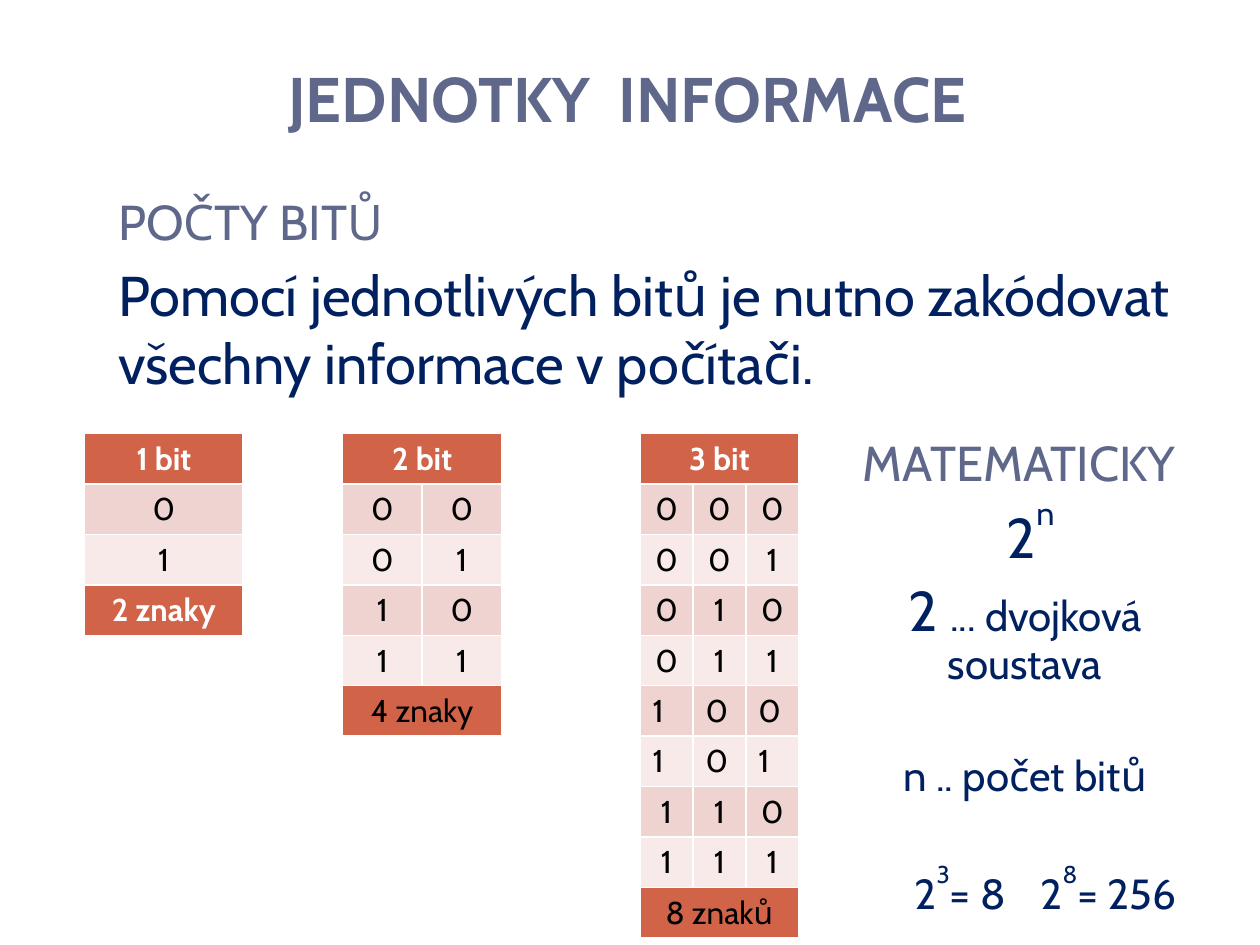
from dataclasses import dataclass
from itertools import product

from lxml import etree
from pptx import Presentation
from pptx.dml.color import RGBColor
from pptx.enum import text
from pptx.oxml.ns import qn
from pptx.util import Inches, Pt

COLORS = {
    "heading": "5F688B",
    "body": "002060",
    "accent": "D16349",
    "band_dark": "EED3D0",
    "band_light": "F7EAE9",
    "white": "FFFFFF",
    "black": "000000",
}
FONT = "Cabin"
CENTER, LEFT = text.PP_ALIGN.CENTER, text.PP_ALIGN.LEFT
TABLE_TOP, TABLE_WIDTH, ROW_HEIGHT = 3.44, 1.26, 0.4
LEFT_ALIGNED_CODES = ("100", "101")


@dataclass
class Piece:
    text: str
    size: float = 24
    color: str = "body"
    bold: bool = False
    raised: bool = False


@dataclass
class Line:
    pieces: list[Piece]
    align: text.PP_ALIGN = CENTER
    before: float = 6
    indent: float = 0
    tabs: tuple[float, ...] = ()


@dataclass
class BitTable:
    bits: int
    left: float
    total: str
    total_color: str = "black"
    total_bold: bool = False


def add_piece(paragraph, piece: Piece) -> None:
    run = paragraph.add_run()
    run.text = piece.text
    run.font.name = FONT
    run.font.size = Pt(piece.size)
    run.font.bold = piece.bold
    run.font.color.rgb = RGBColor.from_string(COLORS[piece.color])
    if piece.raised:
        run.font._element.set("baseline", "60000")


def set_indent_and_tabs(paragraph, line: Line) -> None:
    properties = paragraph._p.get_or_add_pPr()
    properties.set("marL", str(Inches(line.indent)))
    properties.set("indent", "0")
    if line.tabs:
        stops = etree.SubElement(properties, qn("a:tabLst"))
        for position in line.tabs:
            etree.SubElement(stops, qn("a:tab"), pos=str(Inches(position)), algn="l")


def add_text(slide, box: tuple[float, ...], lines: list[Line], spacing: float) -> None:
    frame = slide.shapes.add_textbox(*map(Inches, box)).text_frame
    frame.word_wrap = True
    for index, line in enumerate(lines):
        paragraph = frame.add_paragraph() if index else frame.paragraphs[0]
        paragraph.alignment = line.align
        paragraph.line_spacing = spacing
        paragraph.space_before = Pt(line.before)
        set_indent_and_tabs(paragraph, line)
        for piece in line.pieces:
            add_piece(paragraph, piece)


def fill_cell(cell, piece: Piece, fill: str, align: text.PP_ALIGN = CENTER) -> None:
    cell.fill.solid()
    cell.fill.fore_color.rgb = RGBColor.from_string(COLORS[fill])
    paragraph = cell.text_frame.paragraphs[0]
    paragraph.alignment = align
    add_piece(paragraph, piece)


def add_bit_table(slide, spec: BitTable) -> None:
    """List every code of the given number of bits between a header and a total."""
    codes = ["".join(digits) for digits in product("01", repeat=spec.bits)]
    rows = len(codes) + 2
    table = slide.shapes.add_table(
        rows, spec.bits, Inches(spec.left), Inches(TABLE_TOP),
        Inches(TABLE_WIDTH), Inches(ROW_HEIGHT * rows),
    ).table
    header = Piece(f"{spec.bits} bit", 18, "white", True)
    total = Piece(spec.total, 18, spec.total_color, spec.total_bold)
    for row, piece in ((0, header), (rows - 1, total)):
        if spec.bits > 1:
            table.cell(row, 0).merge(table.cell(row, spec.bits - 1))
        fill_cell(table.cell(row, 0), piece, "accent")
    for row, code in enumerate(codes, start=1):
        fill = "band_dark" if row % 2 else "band_light"
        align = LEFT if code in LEFT_ALIGNED_CODES else CENTER
        for column, digit in enumerate(code):
            fill_cell(table.cell(row, column), Piece(digit, 18, "black"), fill, align)


def set_title(slide) -> None:
    title = slide.shapes.title
    title.left, title.top, title.width, title.height = map(Inches, (0.43, 0.44, 9.21, 0.68))
    frame = title.text_frame
    frame.auto_size = text.MSO_AUTO_SIZE.NONE
    frame.vertical_anchor = text.MSO_ANCHOR.BOTTOM
    paragraph = frame.paragraphs[0]
    paragraph.alignment = CENTER
    paragraph.line_spacing = Pt(20)
    add_piece(paragraph, Piece("JEDNOTKY  INFORMACE ", 36, "heading", True))


INTRO = [
    Line([Piece("POČTY BITŮ", 28, "heading")], LEFT, indent=0.09),
    Line([Piece("Pomocí jednotlivých bitů je nutno zakódovat "
                "všechny informace v počítači.", 32)], LEFT, indent=0.09),
]
MATH = [
    Line([Piece("MATEMATICKY", 28, "heading")], LEFT, indent=0.09),
    Line([Piece("2", 32), Piece("n", 32, raised=True)], indent=0.09),
    Line([Piece("2 ", 32), Piece("... dvojková soustava")]),
    Line([Piece("n .. počet bitů")], before=38),
    Line([Piece("\t2"), Piece("3", raised=True), Piece("= 8"),
          Piece("\t2"), Piece("8", raised=True), Piece("= 256")],
         LEFT, before=38, tabs=(0.25, 1.42)),
]
BIT_TABLES = [
    BitTable(1, 0.67, "2 znaky", "white", True),
    BitTable(2, 2.72, "4 znaky"),
    BitTable(3, 5.08, "8 znaků"),
]


def main() -> None:
    deck = Presentation()
    deck.slide_width, deck.slide_height = Inches(10), Inches(7.5)
    slide = deck.slides.add_slide(deck.slide_layouts[5])
    set_title(slide)
    add_text(slide, (0.75, 1.47, 8.66, 1.89), INTRO, 1)
    for spec in BIT_TABLES:
        add_bit_table(slide, spec)
    add_text(slide, (6.66, 3.44, 2.95, 3.94), MATH, 0.9)
    deck.save("out.pptx")


if __name__ == "__main__":
    main()
